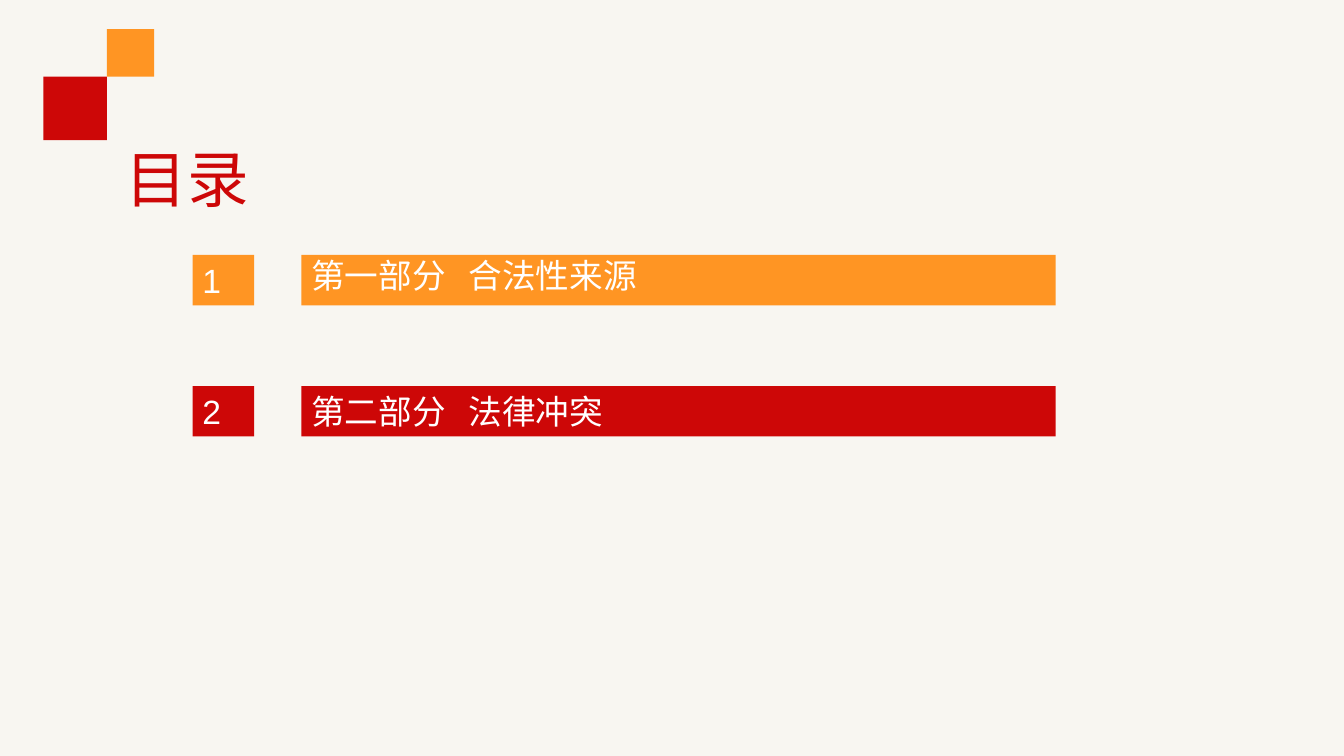
import pptx
import pptx.dml.color
import pptx.enum.shapes
import pptx.enum.text
import pptx.util
from lxml import etree
from pptx.oxml.ns import qn
from pptx.util import Inches

COLORS = {
    "background": "F8F6F1",
    "red": "CD0707",
    "orange": "FF9523",
    "white": "FFFFFF",
}

SECTIONS = [
    ("1", "第一部分\t合法性来源", "orange", 0.9),
    ("2", "第二部分\t法律冲突", "red", 1.0),
]
FIRST_TOP = 2.53
SECTION_STEP = 1.3
BAR_HEIGHT = 0.5
NAME_TAB = 1.56


def rgb(color):
    return pptx.dml.color.RGBColor.from_string(COLORS[color])


def write_text(shape, text, size=24, color="white", anchor="TOP", spacing=1.0, tab=None):
    frame = shape.text_frame
    frame.word_wrap = True
    frame.vertical_anchor = getattr(pptx.enum.text.MSO_ANCHOR, anchor)
    paragraph = frame.paragraphs[0]
    paragraph.alignment = pptx.enum.text.PP_ALIGN.LEFT
    paragraph.line_spacing = spacing
    if tab:
        stops = etree.SubElement(paragraph._p.get_or_add_pPr(), qn("a:tabLst"))
        etree.SubElement(stops, qn("a:tab"), pos=str(int(Inches(tab))), algn="l")
    run = paragraph.add_run()
    run.text = text
    run.font.name = "Arial"
    run.font.size = pptx.util.Pt(size)
    run.font.color.rgb = rgb(color)


def add_block(slide, left, top, width, height, color):
    block = slide.shapes.add_shape(
        pptx.enum.shapes.MSO_SHAPE.RECTANGLE,
        Inches(left), Inches(top), Inches(width), Inches(height),
    )
    block.shadow.inherit = False
    block.fill.solid()
    block.fill.fore_color.rgb = rgb(color)
    block.line.fill.background()
    return block


def add_heading(slide, text):
    heading = slide.shapes.add_textbox(Inches(1.15), Inches(1.23), Inches(11.27), Inches(1.16))
    write_text(heading, text, size=44, color="red", anchor="MIDDLE", spacing=0.9)


def add_section(slide, top, number, name, color, spacing):
    name_bar = add_block(slide, 2.99, top, 7.48, BAR_HEIGHT, color)
    write_text(name_bar, name, spacing=spacing, tab=NAME_TAB)
    number_box = add_block(slide, 1.91, top, 0.61, BAR_HEIGHT, color)
    write_text(number_box, number)


def main():
    deck = pptx.Presentation()
    deck.slide_width = Inches(13.33)
    deck.slide_height = Inches(7.5)
    slide = deck.slides.add_slide(deck.slide_layouts[6])
    slide.background.fill.solid()
    slide.background.fill.fore_color.rgb = rgb("background")

    add_block(slide, 0.43, 0.76, 0.63, 0.63, "red")
    add_block(slide, 1.06, 0.29, 0.47, 0.47, "orange")
    add_heading(slide, "目录")
    for index, section in enumerate(SECTIONS):
        add_section(slide, FIRST_TOP + index * SECTION_STEP, *section)

    deck.save("out.pptx")


if __name__ == "__main__":
    main()
